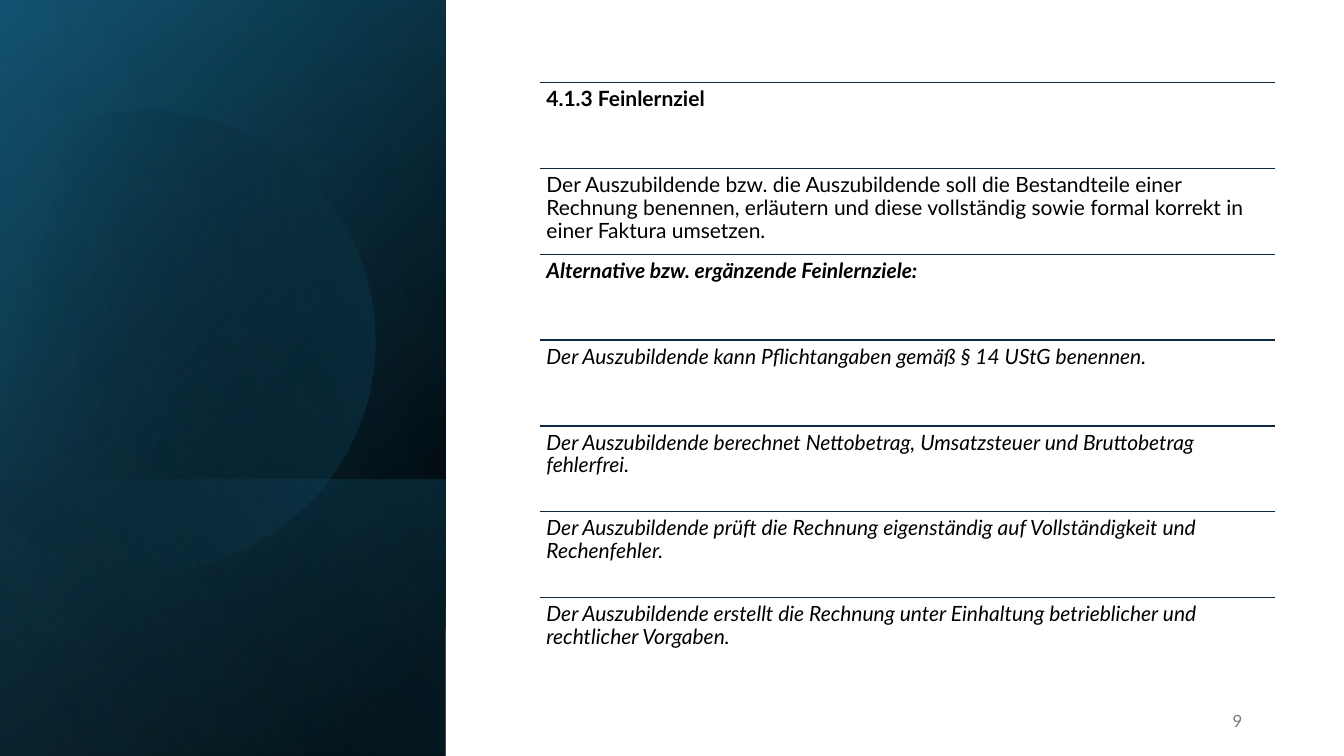
from math import cos, radians, sin

from lxml.etree import SubElement
from pptx import Presentation
from pptx.dml.color import RGBColor
from pptx.enum.shapes import MSO_CONNECTOR, MSO_SHAPE
from pptx.enum.text import MSO_ANCHOR, PP_ALIGN
from pptx.oxml.ns import qn
from pptx.util import Inches, Pt

BLACK = RGBColor(0x00, 0x00, 0x00)
DEEP_TEAL = RGBColor(0x10, 0x48, 0x62)
TEAL = RGBColor(0x15, 0x60, 0x82)
SKY = RGBColor(0x46, 0xB1, 0xE1)
NAVY = RGBColor(0x0E, 0x28, 0x41)
GREY = RGBColor(0x79, 0x79, 0x79)
FONT = "Lato"

GOALS = [
    ("4.1.3 Feinlernziel", True, False),
    ("Der Auszubildende bzw. die Auszubildende soll die Bestandteile einer Rechnung benennen, "
     "erläutern und diese vollständig sowie formal korrekt in einer Faktura umsetzen.", False, False),
    ("Alternative bzw. ergänzende Feinlernziele:", True, True),
    ("Der Auszubildende kann Pflichtangaben gemäß § 14 UStG benennen.", False, True),
    ("Der Auszubildende berechnet Nettobetrag, Umsatzsteuer und Bruttobetrag fehlerfrei.", False, True),
    ("Der Auszubildende prüft die Rechnung eigenständig auf Vollständigkeit und Rechenfehler.", False, True),
    ("Der Auszubildende erstellt die Rechnung unter Einhaltung betrieblicher und rechtlicher Vorgaben.",
     False, True),
]

DISC_START = (1.49, 1.1)
DISC_CURVES = [
    ((2.46, 1.12), (3.35, 1.77), (3.63, 2.75)),
    ((3.98, 3.97), (3.28, 5.23), (2.07, 5.58)),
    ((1.31, 5.8), (0.53, 5.61), (-0.03, 5.14)),
    ((-0.15, 5.03), (-0.15, 5.03), (-0.15, 5.03)),
    ((-0.15, 1.75), (-0.15, 1.75), (-0.15, 1.75)),
    ((0, 1.61), (0, 1.61), (0, 1.61)),
    ((0.23, 1.42), (0.5, 1.28), (0.8, 1.19)),
    ((1.03, 1.13), (1.26, 1.1), (1.49, 1.1)),
]


def paint_gradient(sp, angle, stops):
    """Fill a shape with two stops of position, colour and opacity in percent."""
    sp.shadow.inherit = False
    sp.line.fill.background()
    sp.fill.gradient()
    sp.fill.gradient_angle = 360 - angle
    for stop, (position, color, _) in zip(sp.fill.gradient_stops, stops):
        stop.position = position / 100
        stop.color.rgb = color
    for clr, (_, _, opacity) in zip(sp._element.spPr.iter(qn("a:srgbClr")), stops):
        if opacity < 100:
            SubElement(clr, qn("a:alpha")).set("val", str(opacity * 1000))


def add_turned_panel(slide, x, y, w, h, angle, stops):
    """Place a mirrored quarter-turned rectangle that covers the given box."""
    left, top = x + (w - h) / 2, y + (h - w) / 2
    sp = slide.shapes.add_shape(MSO_SHAPE.RECTANGLE, Inches(left), Inches(top), Inches(h), Inches(w))
    sp.rotation = 90
    sp._element.spPr.find(qn("a:xfrm")).set("flipH", "1")
    paint_gradient(sp, angle, stops)


def curve_points(start, curves, steps=16):
    """Return points along a chain of cubic curves."""
    points = [start]
    for c1, c2, end in curves:
        origin = points[-1]
        for i in range(1, steps + 1):
            t = i / steps
            u = 1 - t
            points.append(tuple(
                u**3 * a + 3 * u * u * t * b + 3 * u * t * t * c + t**3 * d
                for a, b, c, d in zip(origin, c1, c2, end)))
    return points


def add_disc(slide, cx, cy, rotation):
    """Place the tilted translucent disc that turns about the given centre."""
    a = radians(-rotation)
    points = []
    for x, y in curve_points(DISC_START, DISC_CURVES):
        dx, dy = x - cx, y - cy
        points.append((Inches(cx + dx * cos(a) - dy * sin(a)), Inches(cy + dx * sin(a) + dy * cos(a))))
    builder = slide.shapes.build_freeform(*points[0], scale=1.0)
    builder.add_line_segments(points[1:], close=True)
    sp = builder.convert_to_shape()
    sp.rotation = rotation
    paint_gradient(sp, 30, [(29, BLACK, 0), (100, TEAL, 43)])


def add_side_panel(slide, x, y, w, h):
    """Layer the gradients of the dark side panel in its box."""
    foot = 2.74
    add_turned_panel(slide, x, y, w, h, 50, [(8, BLACK, 100), (100, DEEP_TEAL, 100)])
    add_turned_panel(slide, x, y, w, h, 30, [(0, BLACK, 0), (99, TEAL, 46)])
    add_turned_panel(slide, x, y + h - foot, w, foot, 130, [(2, TEAL, 29), (100, BLACK, 30)])
    add_disc(slide, x + 1.59, y + 3.35, 343.9)
    add_turned_panel(slide, x, y, w, h, 120, [(0, BLACK, 0), (99, SKY, 11)])


def add_text(shapes, x, y, w, h, text, size, color):
    """Add a wrapped one-paragraph text box and return its frame and paragraph."""
    tf = shapes.add_textbox(Inches(x), Inches(y), Inches(w), Inches(h)).text_frame
    tf.word_wrap = True
    p = tf.paragraphs[0]
    p.text = text
    p.font.name = FONT
    p.font.size = Pt(size)
    p.font.color.rgb = color
    return tf, p


def add_goal_list(slide, x, y, w, h):
    """Stack the learning goals in equal rows, each under a rule."""
    shapes = slide.shapes.add_group_shape().shapes
    row_h = h / len(GOALS)
    for i, (text, bold, italic) in enumerate(GOALS):
        top = y + i * row_h
        rule = shapes.add_connector(
            MSO_CONNECTOR.STRAIGHT, Inches(x), Inches(top), Inches(x + w), Inches(top))
        rule.line.color.rgb = NAVY
        rule.line.width = Pt(1)
        SubElement(rule._element.spPr, qn("a:effectLst"))
        tf, p = add_text(shapes, x, top, w, row_h, text, 15, BLACK)
        tf.margin_left = tf.margin_right = tf.margin_top = tf.margin_bottom = Inches(0.06)
        p.line_spacing = 0.9
        p.font.bold = bold
        p.font.italic = italic


def add_page_number(slide, x, y, w, h):
    """Set the page number at the right of its box."""
    tf, p = add_text(slide.shapes, x, y, w, h, "9", 12, GREY)
    tf.vertical_anchor = MSO_ANCHOR.MIDDLE
    p.alignment = PP_ALIGN.RIGHT


def main():
    """Build the slide and save it."""
    prs = Presentation()
    prs.slide_width, prs.slide_height = Inches(13.33), Inches(7.5)
    slide = prs.slides.add_slide(prs.slide_layouts[6])
    add_side_panel(slide, 0, 0, 4.42, 7.5)
    add_goal_list(slide, 5.36, 0.82, 7.29, 5.96)
    add_page_number(slide, 9.42, 6.95, 3, 0.4)
    prs.save("out.pptx")


if __name__ == "__main__":
    main()
